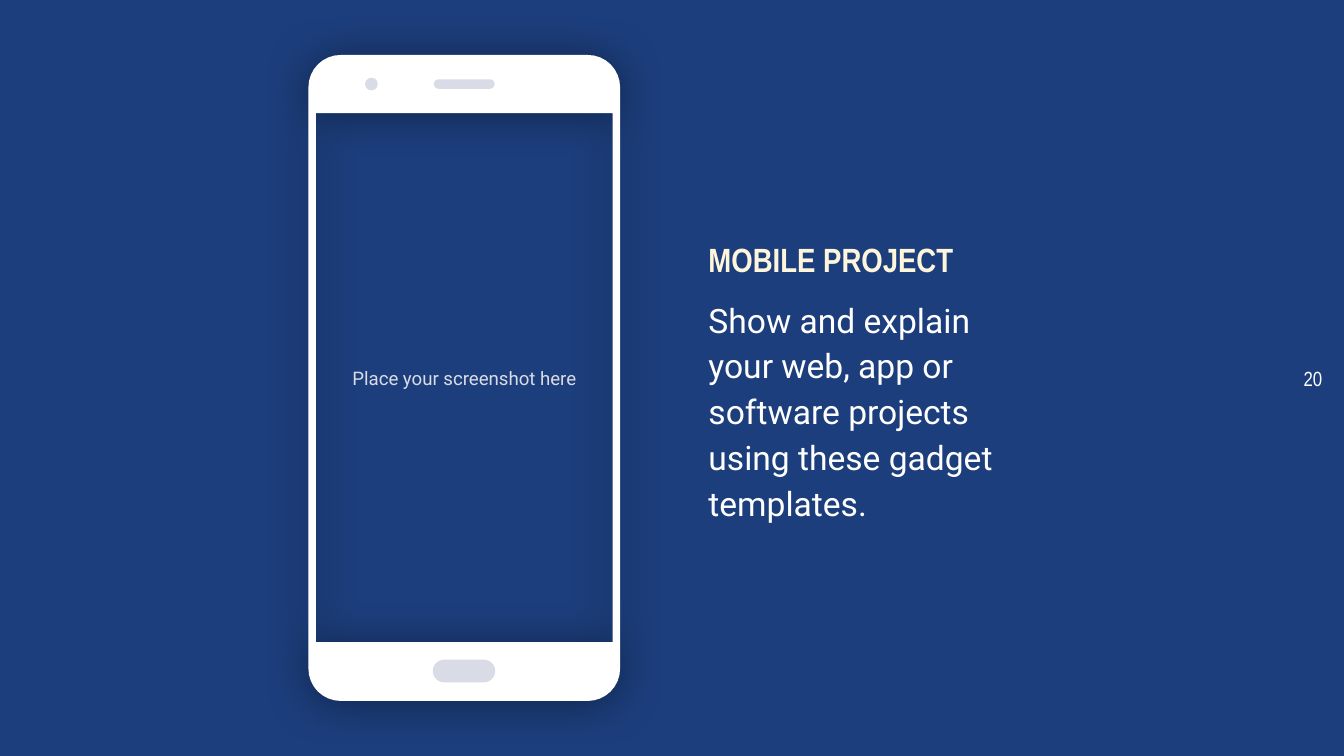
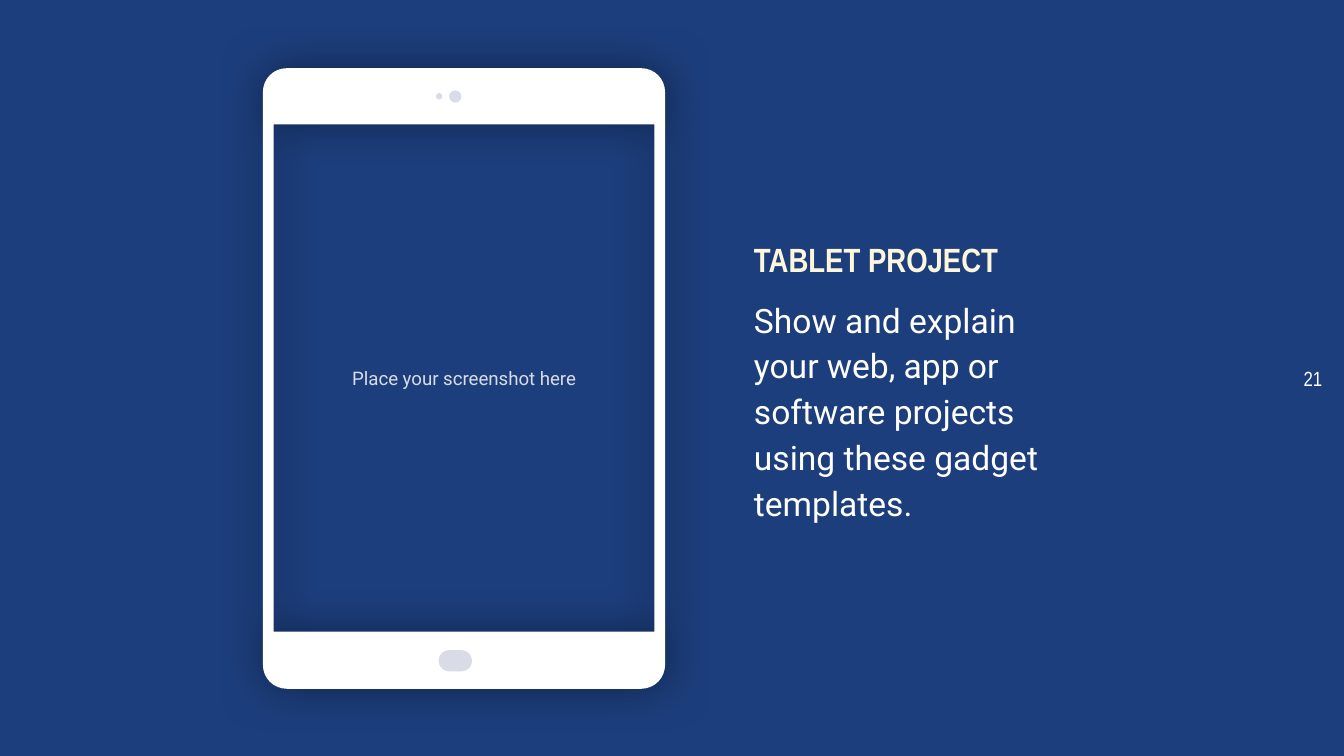
from dataclasses import dataclass
from math import cos, pi, sin

from lxml import etree
from pptx import Presentation
from pptx.dml.color import RGBColor
from pptx.enum.shapes import MSO_SHAPE
from pptx.enum.text import MSO_ANCHOR, PP_ALIGN
from pptx.oxml.ns import qn
from pptx.util import Cm, Pt

PILL = MSO_SHAPE.ROUNDED_RECTANGLE
DOT = MSO_SHAPE.OVAL
MIDDLE = MSO_ANCHOR.MIDDLE
LEFT, CENTER, RIGHT = PP_ALIGN.LEFT, PP_ALIGN.CENTER, PP_ALIGN.RIGHT

SLIDE_WIDTH, SLIDE_HEIGHT = 25.4, 14.29
CORNER_STEPS = 8


@dataclass(frozen=True)
class Theme:
    background: str = "1D3E7C"
    title: str = "FDF6DA"
    text: str = "FFFFFF"
    device: str = "FFFFFF"
    detail: str = "D9DCE6"
    shadow: str = "010E1B"
    heading_font: str = "Arial Narrow"
    body_font: str = "Roboto"
    body_size: int = 18
    number_size: int = 11
    label_size: int = 10


THEME = Theme()

TITLE_STYLE = {"name": THEME.heading_font, "size": THEME.body_size, "bold": True, "color": THEME.title}
BODY_STYLE = {"name": THEME.body_font, "size": THEME.body_size, "bold": False, "color": THEME.text}
NUMBER_STYLE = {"name": THEME.heading_font, "size": THEME.number_size, "color": THEME.text}
LABEL_STYLE = {"name": THEME.body_font, "size": THEME.label_size, "color": THEME.detail}

DESCRIPTION = "Show and explain your web, app or software projects using these gadget templates."

# Boxes are left, top, width, height in centimetres.
PROJECTS = [
    {
        "title": "MOBILE PROJECT",
        "number": "20",
        "text_left": 13.39,
        "frame": (5.83, 1.04, 5.89, 12.21),
        "screen": (5.97, 2.14, 5.61, 10),
        "radius": 0.61,
        "shadow": {"distance": 1.5, "angle": 90},
        "details": [
            (PILL, (8.18, 12.47, 1.18, 0.43)),
            (DOT, (6.9, 1.47, 0.24, 0.24)),
            (PILL, (8.2, 1.5, 1.15, 0.18)),
        ],
    },
    {
        "title": "TABLET PROJECT",
        "number": "21",
        "text_left": 14.25,
        "frame": (4.97, 1.29, 7.6, 11.73),
        "screen": (5.17, 2.35, 7.2, 9.59),
        "radius": 0.45,
        "shadow": {"distance": 0.8, "angle": 0},
        "details": [
            (PILL, (8.29, 12.29, 0.63, 0.4)),
            (DOT, (8.24, 1.76, 0.12, 0.12)),
            (DOT, (8.49, 1.71, 0.23, 0.23)),
        ],
    },
]


def to_lengths(values):
    return [Cm(value) for value in values]


def set_font(font, style):
    for key, value in style.items():
        if key == "color":
            font.color.rgb = RGBColor.from_string(value)
        else:
            setattr(font, key, Pt(value) if key == "size" else value)


def fill_plain(shape, color):
    shape.shadow.inherit = False
    shape.fill.solid()
    shape.fill.fore_color.rgb = RGBColor.from_string(color)
    shape.line.fill.background()


def add_text(slide, box, paragraphs, alignment=LEFT, inset=0):
    """Add a vertically centred box of (text, style, paragraph format) entries."""
    frame = slide.shapes.add_textbox(*to_lengths(box)).text_frame
    frame_format = {"word_wrap": True, "vertical_anchor": MIDDLE}
    for side in ("left", "top", "right", "bottom"):
        frame_format[f"margin_{side}"] = Cm(inset)
    for key, value in frame_format.items():
        setattr(frame, key, value)
    for index, (text, style, paragraph_format) in enumerate(paragraphs):
        paragraph = frame.add_paragraph() if index else frame.paragraphs[0]
        for key, value in {"alignment": alignment, **paragraph_format}.items():
            setattr(paragraph, key, value)
        run = paragraph.add_run()
        run.text = text
        set_font(run.font, style)


def rounded_outline(box, radius):
    """Return points around a rounded box, clockwise from its left side."""
    left, top, width, height = box
    right, bottom = left + width - radius, top + height - radius
    left, top = left + radius, top + radius
    centers = [(left, top), (right, top), (right, bottom), (left, bottom)]
    points = []
    for corner, (x, y) in enumerate(centers):
        for step in range(CORNER_STEPS + 1):
            angle = pi + (corner + step / CORNER_STEPS) * pi / 2
            points.append((Cm(x + radius * cos(angle)), Cm(y + radius * sin(angle))))
    return points


def add_shadow(shape, distance, angle):
    effects = shape.element.spPr.find(qn("a:effectLst"))
    shadow = etree.SubElement(
        effects, qn("a:outerShdw"), blurRad=str(Pt(22.5)), dist=str(Pt(distance)),
        dir=str(angle * 60000), algn="ctr", rotWithShape="0")
    color = etree.SubElement(shadow, qn("a:srgbClr"), val=THEME.shadow)
    etree.SubElement(color, qn("a:alpha"), val="50000")


def add_device(slide, project):
    """Add a device frame with an open screen, and its buttons and cameras."""
    outline = rounded_outline(project["frame"], project["radius"])
    left, top, width, height = project["screen"]
    right, bottom = left + width, top + height
    # The opening runs against the outline so that it stays unfilled.
    opening = [to_lengths(point) for point in
               ((left, top), (left, bottom), (right, bottom), (right, top))]
    builder = slide.shapes.build_freeform(*outline[0])
    builder.add_line_segments(outline[1:])
    builder.move_to(*opening[0])
    builder.add_line_segments(opening[1:])
    device = builder.convert_to_shape()
    fill_plain(device, THEME.device)
    add_shadow(device, **project["shadow"])

    for kind, box in project["details"]:
        detail = slide.shapes.add_shape(kind, *to_lengths(box))
        fill_plain(detail, THEME.detail)
        if kind == PILL:
            detail.adjustments[0] = 0.5


def add_project_slide(presentation, project):
    slide = presentation.slides.add_slide(presentation.slide_layouts[6])
    slide.background.fill.solid()
    slide.background.fill.fore_color.rgb = RGBColor.from_string(THEME.background)

    add_text(slide, (project["text_left"], 1.04, 6.17, 12.22), [
        (project["title"], TITLE_STYLE, {"line_spacing": 1.14}),
        (DESCRIPTION, BODY_STYLE,
         {"line_spacing": 1.14, "space_before": Pt(8), "space_after": Pt(8)}),
    ])
    add_text(slide, project["screen"],
             [("Place your screenshot here", LABEL_STYLE, {})], CENTER, 0.25)
    add_text(slide, (23.47, 0, 1.52, SLIDE_HEIGHT),
             [(project["number"], NUMBER_STYLE, {})], RIGHT)
    add_device(slide, project)


def main():
    presentation = Presentation()
    presentation.slide_width = Cm(SLIDE_WIDTH)
    presentation.slide_height = Cm(SLIDE_HEIGHT)
    for project in PROJECTS:
        add_project_slide(presentation, project)
    presentation.save("out.pptx")


if __name__ == "__main__":
    main()
